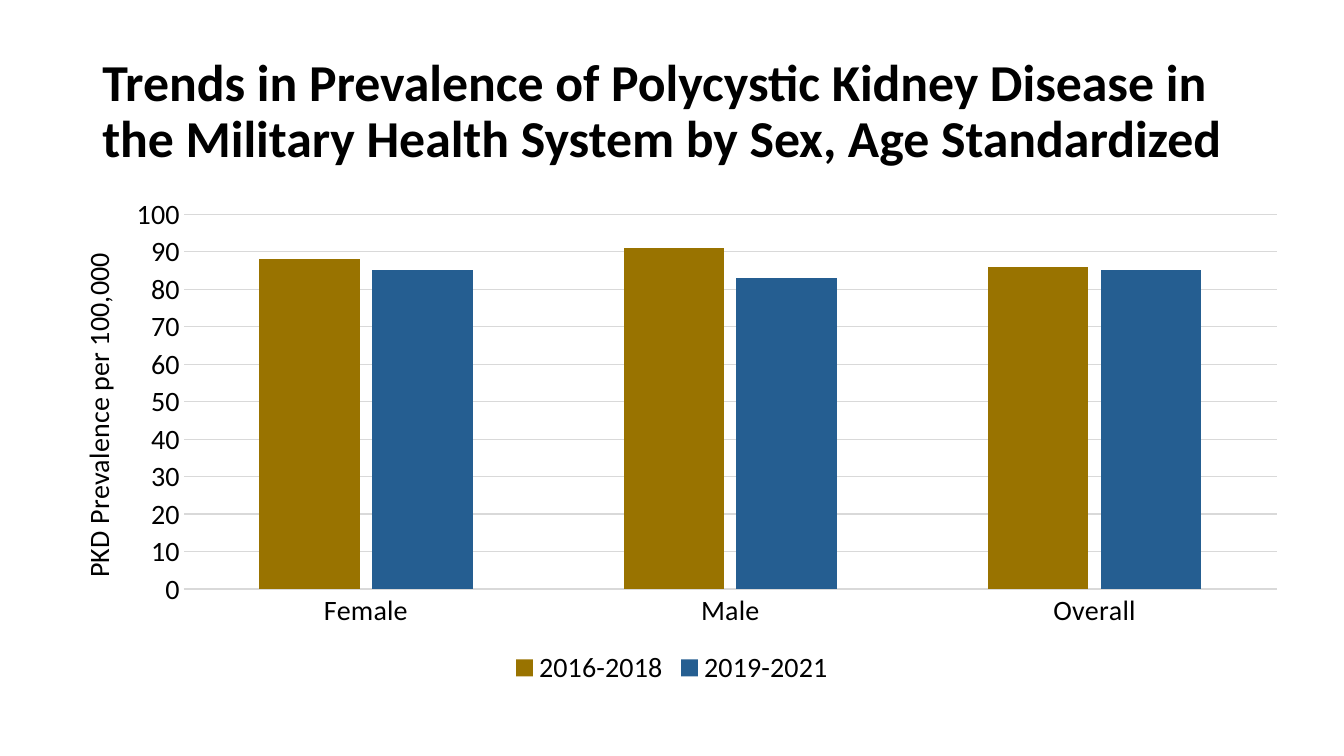
from dataclasses import dataclass

import pptx
import pptx.chart.data
import pptx.dml.color
import pptx.enum.chart
import pptx.enum.text
import pptx.oxml
import pptx.oxml.ns
import pptx.util

EMU_PER_PX = 9525


@dataclass(frozen=True)
class Theme:
    font: str = "Calibri"
    text: str = "000000"
    grid: str = "D9D9D9"
    periods: tuple = ("997300", "255E91")
    heading_size: int = 37
    chart_size: int = 20
    line_width: float = 0.75


THEME = Theme()


def px(length):
    return pptx.util.Emu(length * EMU_PER_PX)


def rgb(value):
    return pptx.dml.color.RGBColor.from_string(value)


def style_font(font, size, bold=False):
    font.name = THEME.font
    font.size = pptx.util.Pt(size)
    font.bold = bold
    font.color.rgb = rgb(THEME.text)


def style_line(line):
    line.color.rgb = rgb(THEME.grid)
    line.width = pptx.util.Pt(THEME.line_width)


def set_layout(parent, box, width, height, successors, inner=False):
    left, top, *extent = box
    fractions = [("x", left / width), ("y", top / height)]
    if extent:
        fractions += [("w", extent[0] / width), ("h", extent[1] / height)]
    target = '<c:layoutTarget val="inner"/>' if inner else ""
    modes = '<c:xMode val="edge"/><c:yMode val="edge"/>'
    values = "".join(f'<c:{key} val="{value:.4f}"/>' for key, value in fractions)
    layout = pptx.oxml.parse_xml(
        f'<c:layout {pptx.oxml.ns.nsdecls("c")}>'
        f"<c:manualLayout>{target}{modes}{values}</c:manualLayout></c:layout>"
    )
    for previous in parent.findall(pptx.oxml.ns.qn("c:layout")):
        parent.remove(previous)
    parent.insert_element_before(layout, *successors)


def add_heading(slide, left, top, width, height):
    heading = slide.shapes.add_textbox(px(left), px(top), px(width), px(height))
    frame = heading.text_frame
    frame.word_wrap = True
    frame.vertical_anchor = pptx.enum.text.MSO_ANCHOR.MIDDLE
    frame.text = (
        "Trends in Prevalence of Polycystic Kidney Disease in "
        "the Military Health System by Sex, Age Standardized"
    )
    paragraph = frame.paragraphs[0]
    paragraph.line_spacing = 0.9
    style_font(paragraph.runs[0].font, THEME.heading_size, bold=True)


def add_prevalence_chart(slide, left, top, width, height):
    prevalence = pptx.chart.data.CategoryChartData()
    prevalence.categories = ["Female", "Male", "Overall"]
    prevalence.add_series("2016-2018", (88, 91, 86))
    prevalence.add_series("2019-2021", (85, 83, 85))
    chart = slide.shapes.add_chart(
        pptx.enum.chart.XL_CHART_TYPE.COLUMN_CLUSTERED,
        px(left), px(top), px(width), px(height), prevalence,
    ).chart
    style_font(chart.font, THEME.chart_size)
    chart.has_title = False
    chart.has_legend = True
    chart.legend.position = pptx.enum.chart.XL_LEGEND_POSITION.BOTTOM
    chart.legend.include_in_layout = False
    style_font(chart.legend.font, THEME.chart_size)

    columns = chart.plots[0]
    columns.vary_by_categories = False
    columns.gap_width = 150
    columns.overlap = -12
    for period, color in zip(columns.series, THEME.periods):
        period.format.fill.solid()
        period.format.fill.fore_color.rgb = rgb(color)

    sexes, rates = chart.category_axis, chart.value_axis
    for axis in (sexes, rates):
        axis.major_tick_mark = pptx.enum.chart.XL_TICK_MARK.NONE
        axis.minor_tick_mark = pptx.enum.chart.XL_TICK_MARK.NONE
        style_font(axis.tick_labels.font, THEME.chart_size)
    style_line(sexes.format.line)
    rates.format.line.fill.background()
    rates.minimum_scale, rates.maximum_scale, rates.major_unit = 0, 100, 10
    style_line(rates.major_gridlines.format.line)

    rates.axis_title.text_frame.text = "PKD Prevalence per 100,000"
    label = rates.axis_title.text_frame.paragraphs[0].runs[0]
    style_font(label.font, THEME.chart_size)
    title_element = rates.axis_title.text_frame._txBody.getparent().getparent()
    set_layout(title_element, (30, 58), width, height, ("c:overlay",))
    plot_area = columns._element.getparent()
    set_layout(plot_area, (135, 26, 1041, 357), width, height,
               ("c:barChart",), inner=True)


def build_prevalence_slide(presentation):
    slide = presentation.slides.add_slide(presentation.slide_layouts[6])
    add_heading(slide, 88, 38, 1104, 139)
    add_prevalence_chart(slide, 40, 178, 1200, 480)


def main():
    presentation = pptx.Presentation()
    presentation.slide_width = px(1280)
    presentation.slide_height = px(720)
    build_prevalence_slide(presentation)
    presentation.save("out.pptx")


if __name__ == "__main__":
    main()
